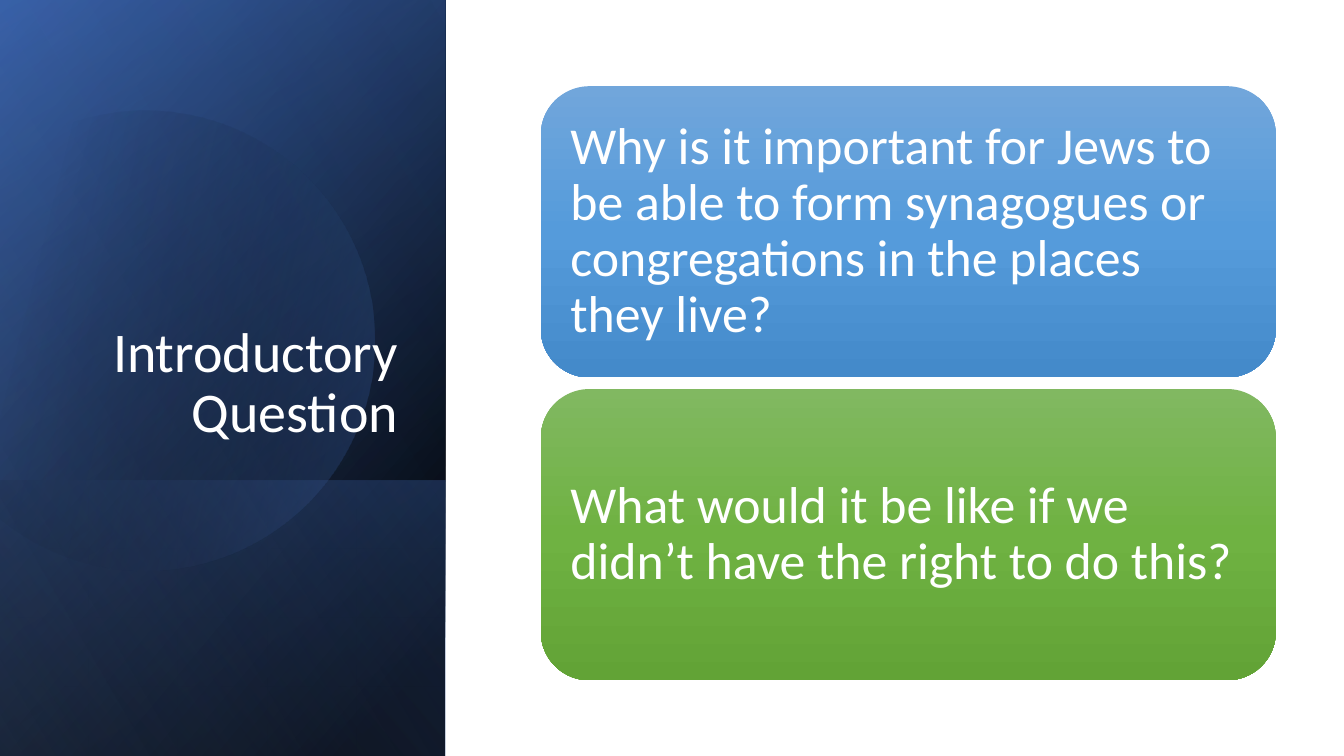
"""Build the introductory question slide with a layered blue panel and two cards."""
from math import cos, radians, sin

from lxml import etree
from pptx import Presentation
from pptx.dml.color import RGBColor
from pptx.enum.shapes import MSO_SHAPE
from pptx.enum.text import MSO_ANCHOR, MSO_AUTO_SIZE, PP_ALIGN
from pptx.oxml.ns import qn
from pptx.util import Pt

RECTANGLE, ROUNDED = MSO_SHAPE.RECTANGLE, MSO_SHAPE.ROUNDED_RECTANGLE
LEFT, RIGHT = PP_ALIGN.LEFT, PP_ALIGN.RIGHT
MIDDLE, BOTTOM = MSO_ANCHOR.MIDDLE, MSO_ANCHOR.BOTTOM
NO_AUTOFIT = MSO_AUTO_SIZE.NONE

WHITE = RGBColor(0xFF, 0xFF, 0xFF)
BLACK = RGBColor(0x00, 0x00, 0x00)
DEEP_BLUE = RGBColor(0x2F, 0x55, 0x97)
BLUE = RGBColor(0x44, 0x72, 0xC4)
PALE_BLUE = RGBColor(0x8F, 0xAA, 0xDC)
SKY_TOP = RGBColor(0x71, 0xA6, 0xDB)
SKY_MIDDLE = RGBColor(0x55, 0x9B, 0xDB)
SKY_BOTTOM = RGBColor(0x44, 0x8A, 0xCA)
GREEN_TOP = RGBColor(0x81, 0xB8, 0x61)
GREEN_MIDDLE = RGBColor(0x6F, 0xB2, 0x42)
GREEN_BOTTOM = RGBColor(0x62, 0xA3, 0x36)

SLIDE_WIDTH, SLIDE_HEIGHT = 960, 540
PANEL_WIDTH, BAND_HEIGHT = 318, 197
DISC_RADIUS, RIM_START, RIM_END = 164, -118, 150
CARD_LEFT, CARD_TOP, CARD_WIDTH, CARD_HEIGHT, CARD_PITCH = 386.3, 61.6, 525, 208, 216.3


def shade(shape, angle, stops):
    """Fill with (position %, colour, opacity %) stops and remove line and shadow."""
    shape.shadow.inherit = False
    shape.line.fill.background()
    shape.fill.gradient()
    gradient = shape._element.spPr.find(qn("a:gradFill"))
    gradient.find(qn("a:lin")).set("ang", str(angle * 60000))
    stop_list = gradient.find(qn("a:gsLst"))
    for old_stop in list(stop_list):
        stop_list.remove(old_stop)
    for position, colour, opacity in stops:
        stop = etree.SubElement(stop_list, qn("a:gs"), pos=str(position * 1000))
        tint = etree.SubElement(stop, qn("a:srgbClr"), val=str(colour))
        if opacity < 100:
            etree.SubElement(tint, qn("a:alpha"), val=str(opacity * 1000))


def write(shape, text, size, align, anchor, side_inset, end_inset):
    """Put one white paragraph in a shape."""
    frame = shape.text_frame
    frame.word_wrap = True
    frame.auto_size = NO_AUTOFIT
    frame.vertical_anchor = anchor
    frame.margin_left = frame.margin_right = Pt(side_inset)
    frame.margin_top = frame.margin_bottom = Pt(end_inset)
    paragraph = frame.paragraphs[0]
    paragraph.alignment = align
    paragraph.line_spacing = 0.9
    run = paragraph.add_run()
    run.text = text
    run.font.name = "Calibri"
    run.font.size = Pt(size)
    run.font.color.rgb = WHITE


deck = Presentation()
deck.slide_width, deck.slide_height = Pt(SLIDE_WIDTH), Pt(SLIDE_HEIGHT)
slide = deck.slides.add_slide(deck.slide_layouts[5])
shapes = slide.shapes

panel_layers = [
    (SLIDE_HEIGHT, 50, [(8, BLACK, 100), (100, DEEP_BLUE, 100)]),
    (SLIDE_HEIGHT, 30, [(0, BLACK, 0), (99, BLUE, 46)]),
    (BAND_HEIGHT, 130, [(2, BLUE, 29), (100, BLACK, 30)]),
    (SLIDE_HEIGHT, 120, [(0, BLACK, 0), (99, PALE_BLUE, 11)]),
]
for index, (height, angle, stops) in enumerate(panel_layers):
    if index == 3:
        rim = [
            (DISC_RADIUS * cos(radians(turn)), DISC_RADIUS * sin(radians(turn)))
            for turn in (RIM_START, -90, 0, 90, RIM_END)
        ]
        outline = shapes.build_freeform(*rim[0], scale=Pt(1))
        outline.add_line_segments(rim[1:], close=True)
        disc = outline.convert_to_shape()
        edges = list(disc._element.iter(qn("a:lnTo")))
        edges[0].addprevious(etree.Element(
            qn("a:arcTo"), wR=str(DISC_RADIUS), hR=str(DISC_RADIUS),
            stAng=str((RIM_START + 360) * 60000),
            swAng=str((RIM_END - RIM_START) * 60000),
        ))
        for edge in edges:
            edge.getparent().remove(edge)
        disc.left, disc.top = Pt(-38.6), Pt(76.3)
        disc.rotation = 343.9
        shade(disc, 30, [(29, BLACK, 0), (100, BLUE, 43)])
    layer = shapes.add_shape(
        RECTANGLE,
        Pt((PANEL_WIDTH - height) / 2),
        Pt(SLIDE_HEIGHT - (height + PANEL_WIDTH) / 2),
        Pt(height),
        Pt(PANEL_WIDTH),
    )
    layer.rotation = 90
    layer._element.spPr.xfrm.set("flipH", "1")
    shade(layer, angle, stops)

title = shapes.title
title.left, title.top, title.width, title.height = Pt(46), Pt(132.8), Pt(245.5), Pt(188.5)
write(title, "Introductory Question", size=40, align=RIGHT, anchor=BOTTOM,
      side_inset=7.2, end_inset=3.6)
shapes._spTree.append(title._element)

questions = [
    ("Why is it important for Jews to be able to form synagogues or "
     "congregations in the places they live?", (SKY_TOP, SKY_MIDDLE, SKY_BOTTOM)),
    ("What would it be like if we didn’t have the right to do this?",
     (GREEN_TOP, GREEN_MIDDLE, GREEN_BOTTOM)),
]
for row, (question, colours) in enumerate(questions):
    card = shapes.add_shape(
        ROUNDED, Pt(CARD_LEFT), Pt(CARD_TOP + row * CARD_PITCH),
        Pt(CARD_WIDTH), Pt(CARD_HEIGHT),
    )
    shade(card, 90, [(50 * step, colour, 100) for step, colour in enumerate(colours)])
    write(card, question, size=37, align=LEFT, anchor=MIDDLE, side_inset=11, end_inset=11)

deck.save("out.pptx")
